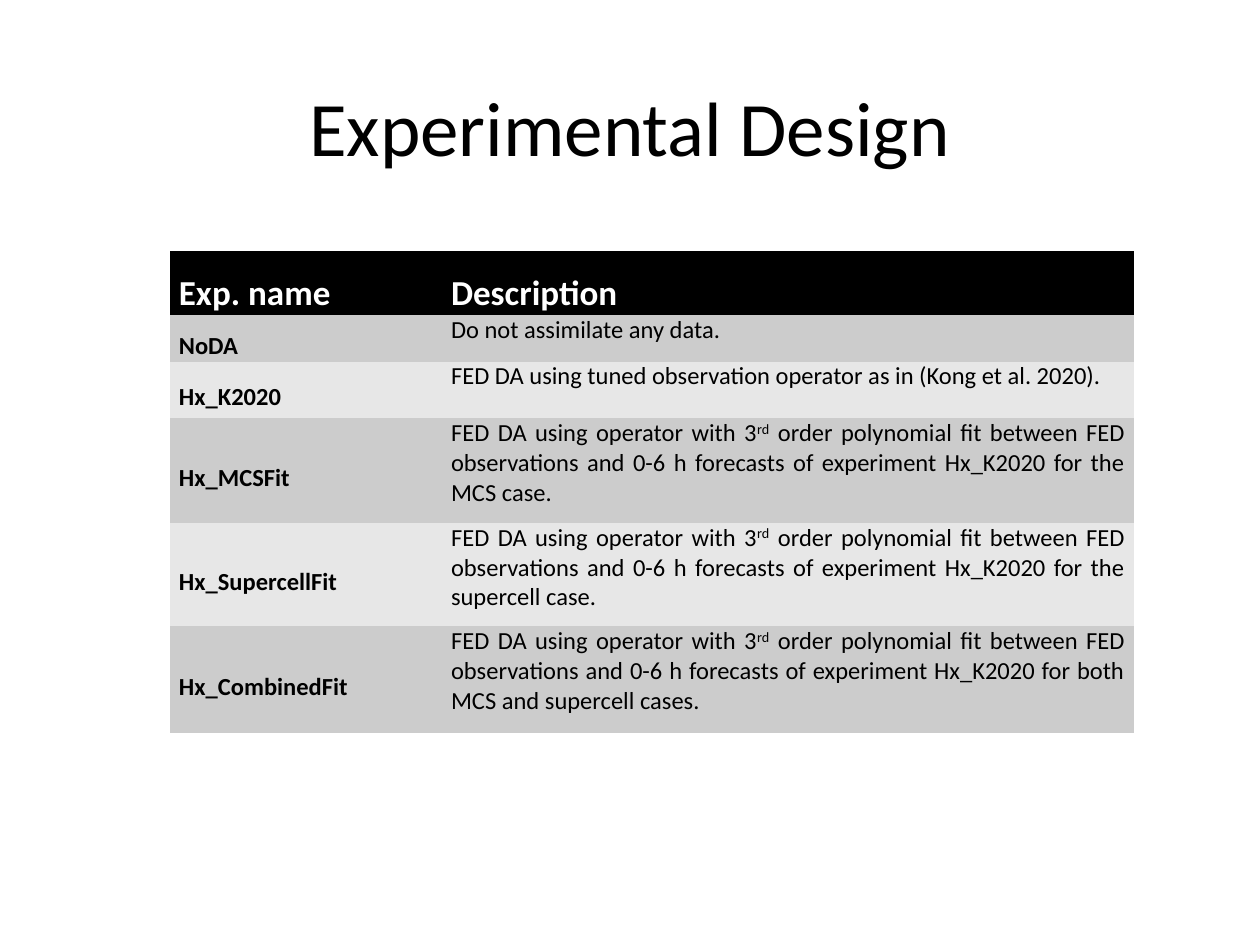
from pptx import Presentation
from pptx.dml.color import RGBColor
from pptx.enum.text import MSO_ANCHOR, PP_ALIGN
from pptx.util import Inches, Pt

BLACK = RGBColor(0x00, 0x00, 0x00)
WHITE = RGBColor(0xFF, 0xFF, 0xFF)
DARK_BAND = RGBColor(0xCC, 0xCC, 0xCC)
LIGHT_BAND = RGBColor(0xE7, 0xE7, 0xE7)

FIT = ("FED DA using operator with 3^rd^ order polynomial fit between FED "
       "observations and 0-6 h forecasts of experiment Hx_K2020 for ")
EXPERIMENTS = [
    ("Exp. name", "Description", 0.3),
    ("NoDA", "Do not assimilate any data.", 0.37),
    ("Hx_K2020", "FED DA using tuned observation operator as in (Kong et al. 2020).", 0.45),
    ("Hx_MCSFit", FIT + "the MCS case.", 0.83),
    ("Hx_SupercellFit", FIT + "the supercell case.", 0.82),
    ("Hx_CombinedFit", FIT + "both MCS and supercell cases.", 0.85),
]
COLUMN_WIDTHS = [2.16, 5.49]


def add_text(paragraph, text, size, color, bold=False):
    """Write text; parts between ^ marks are superscript."""
    for index, part in enumerate(text.split("^")):
        run = paragraph.add_run()
        run.text = part
        font_format = {"name": "Calibri", "size": Pt(size), "bold": bold}
        for attribute, value in font_format.items():
            setattr(run.font, attribute, value)
        run.font.color.rgb = color
        if index % 2:
            run.font._element.set("baseline", "30000")


presentation = Presentation()
presentation.slide_width, presentation.slide_height = Inches(10), Inches(7.5)
slide = presentation.slides.add_slide(presentation.slide_layouts[5])

# Title
title = slide.shapes.title
title_box = {"left": 0.69, "top": 0.32, "width": 8.62, "height": 1.45}
for attribute, value in title_box.items():
    setattr(title, attribute, Inches(value))
title.text_frame.vertical_anchor = MSO_ANCHOR.MIDDLE
heading = title.text_frame.paragraphs[0]
heading.alignment = PP_ALIGN.CENTER
heading.line_spacing = 0.9
add_text(heading, "Experimental Design", 44, BLACK)

# Table of experiments
experiments = slide.shapes.add_table(
    len(EXPERIMENTS), len(COLUMN_WIDTHS), Inches(1.35), Inches(1.99),
    Inches(sum(COLUMN_WIDTHS)), Inches(sum(row[2] for row in EXPERIMENTS))).table
for column, width in zip(experiments.columns, COLUMN_WIDTHS):
    column.width = Inches(width)

for row_index, (name, description, height) in enumerate(EXPERIMENTS):
    experiments.rows[row_index].height = Inches(height)
    is_header = row_index == 0
    band = BLACK if is_header else DARK_BAND if row_index % 2 else LIGHT_BAND
    for column_index, text in enumerate((name, description)):
        is_name = column_index == 0
        cell = experiments.cell(row_index, column_index)
        cell_format = {
            "margin_left": Inches(0.07), "margin_right": Inches(0.07),
            "margin_top": 0, "margin_bottom": 0,
            "vertical_anchor": MSO_ANCHOR.MIDDLE if is_name else MSO_ANCHOR.TOP,
        }
        for attribute, value in cell_format.items():
            setattr(cell, attribute, value)
        cell.fill.solid()
        cell.fill.fore_color.rgb = band
        paragraph = cell.text_frame.paragraphs[0]
        paragraph.alignment = PP_ALIGN.LEFT if is_header else PP_ALIGN.JUSTIFY
        paragraph.line_spacing = 1.5 if is_header or is_name else 1.0
        add_text(paragraph, text, 20 if is_header else 14,
                 WHITE if is_header else BLACK, bold=is_header or is_name)

# Plain look: no cell borders from the default table style
style_id = experiments._tbl.tblPr[0]
style_id.text = "{2D5ABB26-0587-4C30-8999-92F81FD0307C}"

presentation.save("out.pptx")
